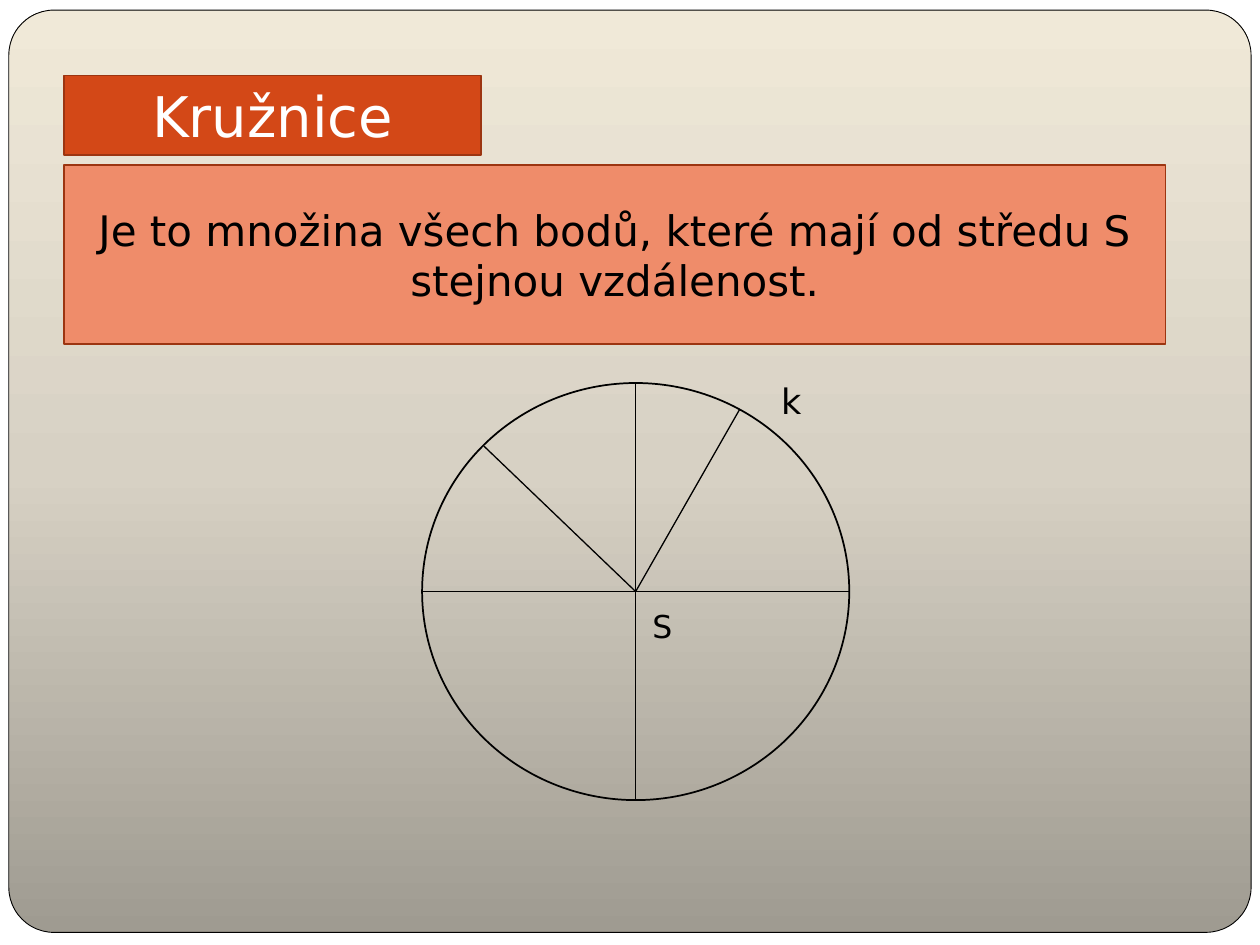
from copy import deepcopy

from pptx import Presentation
from pptx.dml.color import RGBColor
from pptx.enum.shapes import MSO_CONNECTOR, MSO_SHAPE
from pptx.enum.text import MSO_ANCHOR, MSO_AUTO_SIZE, PP_ALIGN
from pptx.oxml.ns import qn
from pptx.util import Inches, Pt

RECTANGLE = MSO_SHAPE.RECTANGLE
ROUNDED = MSO_SHAPE.ROUNDED_RECTANGLE
ELLIPSE = MSO_SHAPE.OVAL
STRAIGHT = MSO_CONNECTOR.STRAIGHT
CENTER = PP_ALIGN.CENTER
LEFT = PP_ALIGN.LEFT
MIDDLE = MSO_ANCHOR.MIDDLE
GROW = MSO_AUTO_SIZE.SHAPE_TO_FIT_TEXT

BLACK = "000000"
WHITE = "FFFFFF"
ORANGE = "D34817"
SALMON = "EF8C6A"
RUST = "9C3511"
BACKDROP = [(0, "9F9B91"), (0.5, "D7D1C4"), (1, "F0E9D8")]


def color(value):
    return RGBColor.from_string(value)


class Painter:
    font = "DejaVu Sans"

    def __init__(self, slide):
        self.slide = slide

    def gradient(self, fill):
        fill.gradient()
        fill.gradient_angle = 90
        first = fill.gradient_stops[0]._gs
        first.addnext(deepcopy(first))
        for stop, (position, value) in zip(fill.gradient_stops, BACKDROP):
            stop.position = position
            stop.color.rgb = color(value)

    def shape(self, kind, place, fill=None, line=None, width=1):
        shape = self.slide.shapes.add_shape(kind, *map(Inches, place))
        shape.shadow.inherit = False
        if fill:
            shape.fill.solid()
            shape.fill.fore_color.rgb = color(fill)
        else:
            shape.fill.background()
        if line:
            shape.line.color.rgb = color(line)
            shape.line.width = Pt(width)
        else:
            shape.line.fill.background()
        return shape

    def text(self, frame, words, size, ink, align):
        frame.text = words
        frame.word_wrap = True
        para = frame.paragraphs[0]
        para.alignment = align
        for span in para.runs:
            span.font.name = self.font
            span.font.size = Pt(size)
            span.font.color.rgb = color(ink)

    def panel(self, place, words, size, ink, fill):
        box = self.shape(RECTANGLE, place, fill, RUST)
        box.text_frame.vertical_anchor = MIDDLE
        self.text(box.text_frame, words, size, ink, CENTER)

    def label(self, place, words, size):
        box = self.slide.shapes.add_textbox(*map(Inches, place))
        self.text(box.text_frame, words, size, BLACK, LEFT)
        box.text_frame.auto_size = GROW

    def line(self, start, end):
        line = self.slide.shapes.add_connector(STRAIGHT, *map(Inches, start + end))
        line.line.color.rgb = color(BLACK)
        line.line.width = Pt(0.75)
        properties = line._element.spPr
        properties.append(properties.makeelement(qn("a:effectLst"), {}))


def main():
    deck = Presentation()
    deck.slide_width = Inches(10)
    deck.slide_height = Inches(7.5)
    slide = deck.slides.add_slide(deck.slide_layouts[6])
    painter = Painter(slide)

    painter.gradient(slide.background.fill)
    painter.shape(RECTANGLE, (0, 0, 10, 7.5), WHITE)
    frame = painter.shape(ROUNDED, (0.07, 0.08, 9.86, 7.32), line=BLACK, width=0.5)
    frame.adjustments[0] = 0.049
    painter.gradient(frame.fill)

    painter.panel((0.51, 0.6, 3.31, 0.63), "Kružnice", 32, WHITE, ORANGE)
    definition = "Je to množina všech bodů, které mají od středu S stejnou vzdálenost."
    painter.panel((0.51, 1.31, 8.74, 1.42), definition, 24, BLACK, SALMON)

    left, top, width, height = circle = (3.35, 3.04, 3.39, 3.31)
    center = (left + width / 2, top + height / 2)
    painter.shape(ELLIPSE, circle, line=BLACK)
    painter.line((center[0], top), (center[0], top + height))
    painter.line((left, center[1]), (left + width, center[1]))
    for point in ((3.84, 3.54), (5.87, 3.25)):
        painter.line(point, center)

    painter.label((5.08, 4.77, 0.39, 0.4), "S", 18)
    painter.label((6.1, 2.96, 0.55, 0.44), "k", 20)
    deck.save("out.pptx")


if __name__ == "__main__":
    main()
